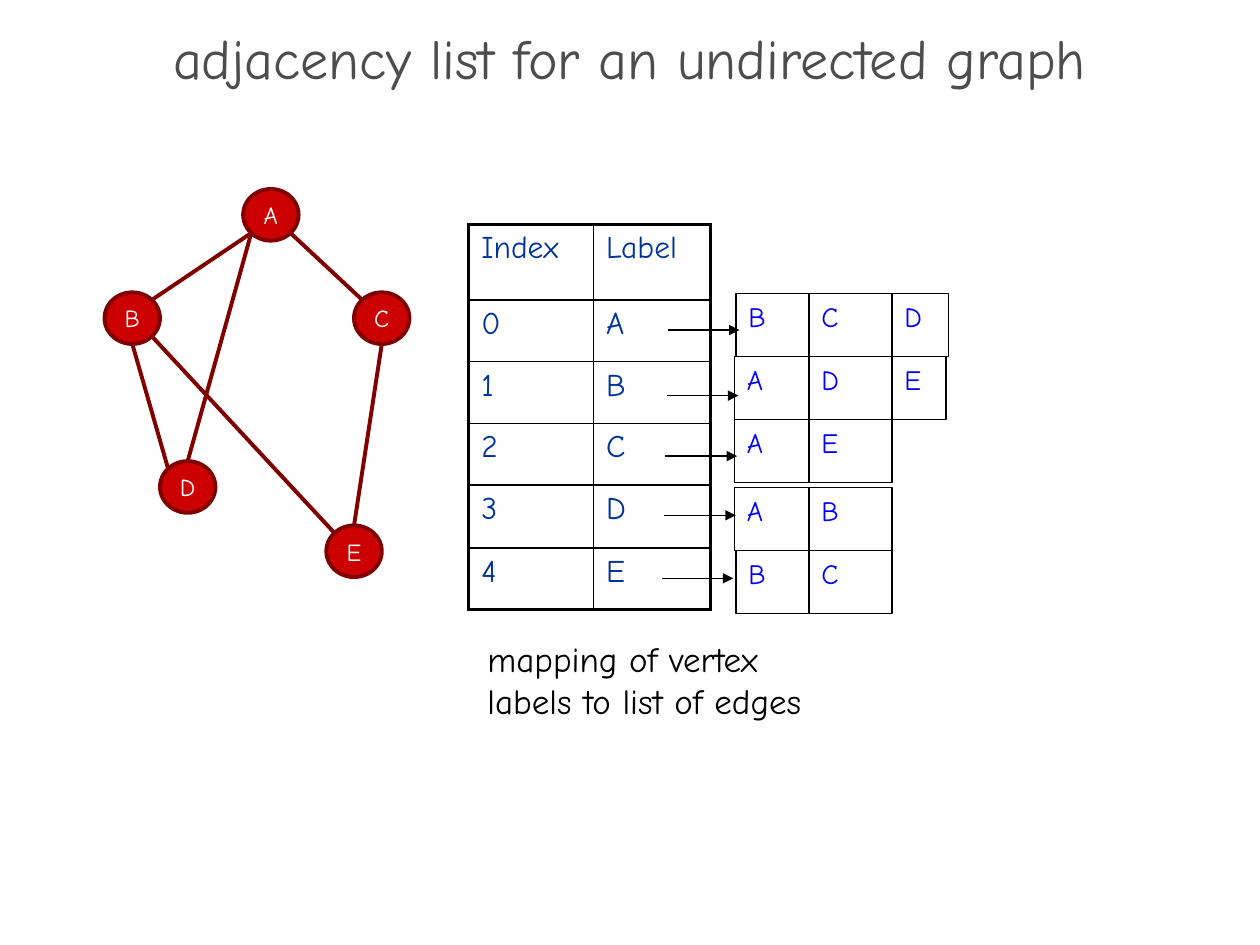
from math import cos, radians, sin

from lxml.etree import SubElement
from pptx import Presentation
from pptx.dml.color import RGBColor
from pptx.enum.shapes import MSO_CONNECTOR, MSO_SHAPE
from pptx.enum.text import MSO_ANCHOR, PP_ALIGN
from pptx.oxml.ns import qn
from pptx.util import Inches, Pt

FONT = "Comic Neue"
COLORS = {
    "title": "4D4D4D",
    "ink": "000000",
    "table": "003399",
    "list": "0000FF",
    "vertex": "CC0000",
    "edge": "800000",
    "label": "FFFFFF",
}

# Graph: top-left corner of each vertex
VERTEX_W, VERTEX_H = 0.44, 0.41
VERTICES = {
    "A": (1.93, 1.5),
    "B": (0.83, 2.32),
    "C": (2.81, 2.32),
    "D": (1.27, 3.66),
    "E": (2.59, 4.17),
}
# Edges: vertex and clockwise angle from its right side, at both ends
EDGES = [
    ("A", 45, "C", 225),
    ("A", 135, "D", 270),
    ("A", 135, "B", 315),
    ("B", 90, "D", 225),
    ("C", 90, "E", 270),
    ("B", 45, "E", 225),
]

# Adjacency: neighbours, left and top of the list, width of a third cell
ADJACENCY = {
    "A": ("BCD", 5.84, 2.33, 0.45),
    "B": ("ADE", 5.83, 2.83, 0.43),
    "C": ("AE", 5.83, 3.33, 0),
    "D": ("AB", 5.83, 3.87, 0),
    "E": ("BC", 5.84, 4.37, 0),
}
CELL_EDGES = (6.42, 7.08)
CELL_H = 0.5
ARROWS = [(5.3, 2.62), (5.29, 3.14), (5.28, 3.62), (5.27, 4.09), (5.25, 4.59)]
ARROW_LENGTH = 0.57


def rgb(name):
    return RGBColor.from_string(COLORS[name])


def write(frame, text, size, color, align=PP_ALIGN.LEFT, anchor=MSO_ANCHOR.TOP,
          wrap=True, spacing=None):
    frame.text = text
    frame.word_wrap = wrap
    frame.vertical_anchor = anchor
    for paragraph in frame.paragraphs:
        paragraph.alignment = align
        paragraph.line_spacing = spacing
        paragraph.font.name = FONT
        paragraph.font.size = Pt(size)
        paragraph.font.color.rgb = rgb(color)


def add_box(slide, kind, left, top, width, height, line, weight, fill=None):
    box = slide.shapes.add_shape(
        kind, Inches(left), Inches(top), Inches(width), Inches(height))
    box.shadow.inherit = False
    if fill:
        box.fill.solid()
        box.fill.fore_color.rgb = rgb(fill)
    else:
        box.fill.background()
    box.line.color.rgb = rgb(line)
    box.line.width = Pt(weight)
    return box


def add_line(slide, start, end, color, weight, arrow=False):
    line = slide.shapes.add_connector(
        MSO_CONNECTOR.STRAIGHT, *(Inches(value) for value in (*start, *end)))
    line.line.color.rgb = rgb(color)
    line.line.width = Pt(weight)
    properties = line._element.spPr
    if arrow:
        SubElement(properties.find(qn("a:ln")), qn("a:tailEnd"), type="triangle")
    SubElement(properties, qn("a:effectLst"))


def set_borders(cell, weights):
    properties = cell._tc.get_or_add_tcPr()
    for side, weight in weights.items():
        border = SubElement(properties, qn(f"a:ln{side}"), w=str(Pt(weight)))
        fill = SubElement(border, qn("a:solidFill"))
        SubElement(fill, qn("a:srgbClr"), val=COLORS["ink"])


def add_index_table(slide):
    rows = [("Index", "Label")]
    rows += [(str(index), label) for index, label in enumerate(ADJACENCY)]
    widths, heights = (0.99, 0.93), (0.6, 0.49, 0.49, 0.49, 0.5, 0.49)
    table = slide.shapes.add_table(
        len(rows), 2, Inches(3.72), Inches(1.78),
        Inches(sum(widths)), Inches(sum(heights))).table
    table.first_row = table.horz_banding = False
    for column, width in zip(table.columns, widths):
        column.width = Inches(width)
    for r, (values, height) in enumerate(zip(rows, heights)):
        table.rows[r].height = Inches(height)
        for c, value in enumerate(values):
            cell = table.cell(r, c)
            write(cell.text_frame, value, 18, "table")
            # Thick on the outside, thin between cells
            outer = {"L": c == 0, "R": c == 1, "T": r == 0, "B": r == len(rows) - 1}
            set_borders(cell, {side: 2.25 if thick else 1
                               for side, thick in outer.items()})
            cell.fill.background()


def add_neighbours(slide, names, left, top, last_width):
    edges = (left, *CELL_EDGES, CELL_EDGES[-1] + last_width)
    for name, start, end in zip(names, edges, edges[1:]):
        cell = add_box(slide, MSO_SHAPE.RECTANGLE, start, top, end - start, CELL_H,
                       "ink", 0.75)
        write(cell.text_frame, name, 16, "list")


def rim_point(vertex, angle):
    left, top = VERTICES[vertex]
    return (left + VERTEX_W / 2 * (1 + cos(radians(angle))),
            top + VERTEX_H / 2 * (1 + sin(radians(angle))))


def add_graph(slide):
    for name, (left, top) in VERTICES.items():
        vertex = add_box(slide, MSO_SHAPE.OVAL, left, top, VERTEX_W, VERTEX_H,
                         "edge", 2.25, fill="vertex")
        write(vertex.text_frame, name, 14, "label", align=PP_ALIGN.CENTER,
              anchor=MSO_ANCHOR.MIDDLE, wrap=False)
    for first, first_angle, second, second_angle in EDGES:
        add_line(slide, rim_point(first, first_angle),
                 rim_point(second, second_angle), "edge", 2.25)


def main():
    deck = Presentation()
    deck.slide_width, deck.slide_height = Inches(10), Inches(7.5)
    slide = deck.slides.add_slide(deck.slide_layouts[5])

    # Title
    title = slide.shapes.title
    title.left, title.top = Inches(0), Inches(0.27)
    title.width, title.height = Inches(10), Inches(0.5)
    write(title.text_frame, "adjacency list for an undirected graph", 32, "title",
          align=PP_ALIGN.CENTER, anchor=MSO_ANCHOR.MIDDLE, spacing=0.7)

    # Caption
    caption = slide.shapes.add_textbox(
        Inches(3.77), Inches(5.01), Inches(3.34), Inches(0.77))
    write(caption.text_frame, "mapping of vertex\nlabels to list of edges", 20, "ink")

    # Index table with its adjacency lists
    add_index_table(slide)
    for neighbours in ADJACENCY.values():
        add_neighbours(slide, *neighbours)
    for left, y in ARROWS:
        add_line(slide, (left, y), (left + ARROW_LENGTH, y), "ink", 0.75, arrow=True)

    # Undirected graph
    add_graph(slide)
    deck.save("out.pptx")


if __name__ == "__main__":
    main()
